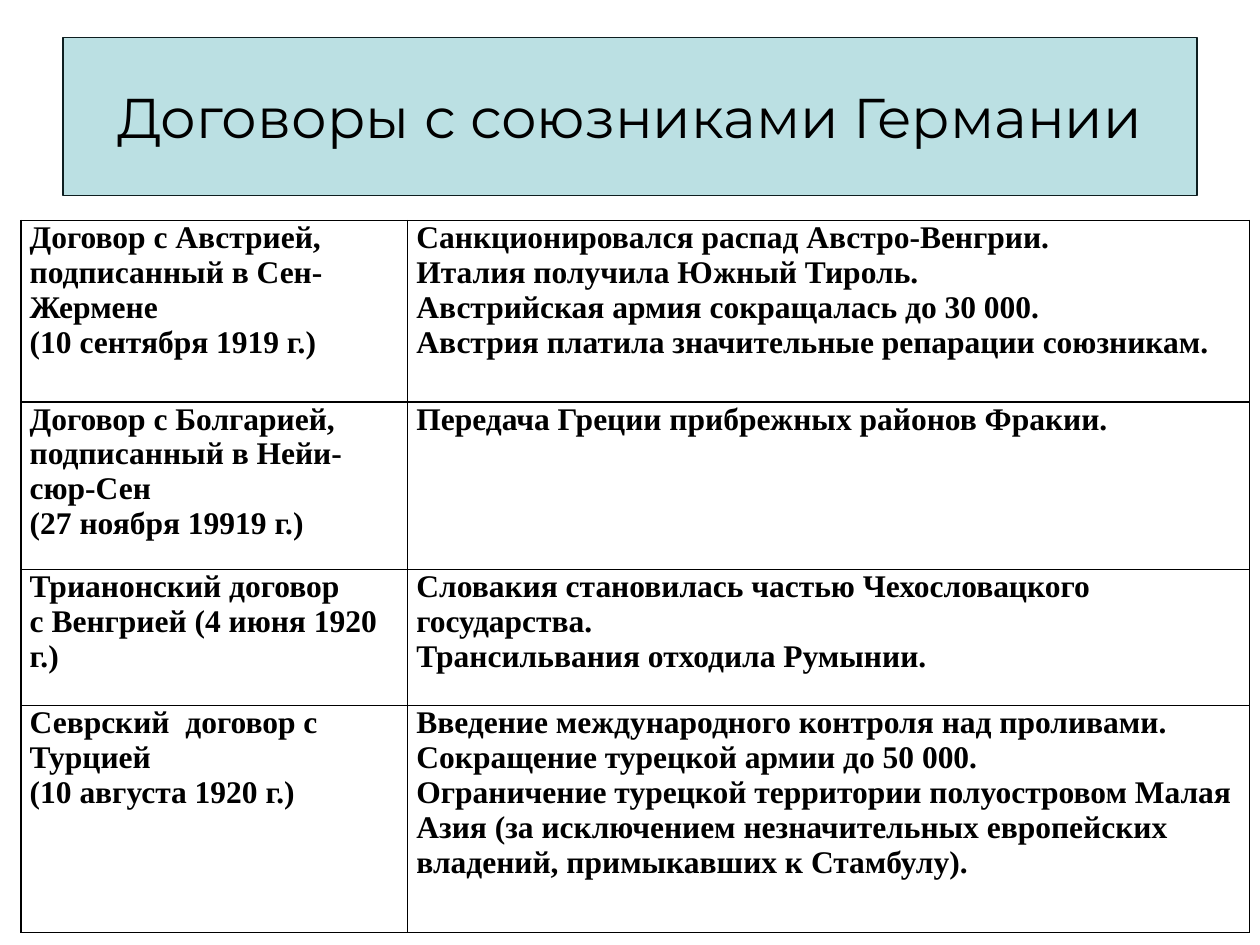
from lxml import etree
from pptx import Presentation
from pptx.dml.color import RGBColor
from pptx.enum.shapes import MSO_SHAPE
from pptx.enum.text import MSO_ANCHOR, PP_ALIGN
from pptx.oxml.ns import qn
from pptx.util import Pt

RECTANGLE = MSO_SHAPE.RECTANGLE
MIDDLE = MSO_ANCHOR.MIDDLE
CENTER = PP_ALIGN.CENTER

BLACK = RGBColor(0x00, 0x00, 0x00)
PALE_TEAL = RGBColor(0xBB, 0xE0, 0xE3)
DARK_TEAL = RGBColor(0x0E, 0x1E, 0x20)

COLUMN_WIDTHS = [221, 481]
ROW_HEIGHTS = [103.7, 95.8, 77.8, 129.6]
TREATIES = [
    ("Договор с Австрией, подписанный в Сен-Жермене\n(10 сентября 1919 г.)",
     "Санкционировался распад Австро-Венгрии.\n"
     "Италия получила Южный Тироль.\n"
     "Австрийская армия сокращалась до 30 000.\n"
     "Австрия платила значительные репарации союзникам."),
    ("Договор с Болгарией, подписанный в Нейи-сюр-Сен\n(27 ноября 19919 г.)",
     "Передача Греции прибрежных районов Фракии."),
    ("Трианонский договор\nс Венгрией (4 июня 1920 г.)",
     "Словакия становилась частью Чехословацкого государства.\n"
     "Трансильвания отходила Румынии."),
    ("Севрский  договор с Турцией\n(10 августа 1920 г.)",
     "Введение международного контроля над проливами.\n"
     "Сокращение турецкой армии до 50 000.\n"
     "Ограничение турецкой территории полуостровом Малая Азия "
     "(за исключением незначительных европейских владений, "
     "примыкавших к Стамбулу)."),
]


class PageBuilder:
    """Holds the style and the current slide."""

    title_font, title_size = "Montserrat", 32
    body_font, body_size = "Times New Roman", 18
    border_width = 1

    def __init__(self, page):
        self.page = page

    def format_text(self, frame, font, size, bold=False):
        for para in frame.paragraphs:
            for span in para.runs:
                span.font.name = font
                span.font.size = Pt(size)
                span.font.bold = bold
                span.font.color.rgb = BLACK

    def title(self, text, left, top, width, height):
        box = self.page.shapes.add_shape(
            RECTANGLE, Pt(left), Pt(top), Pt(width), Pt(height))
        box.shadow.inherit = False
        box.fill.solid()
        box.fill.fore_color.rgb = PALE_TEAL
        box.line.color.rgb = DARK_TEAL
        box.line.width = Pt(0.75)
        frame = box.text_frame
        frame.text = text
        frame.word_wrap = True
        frame.vertical_anchor = MIDDLE
        frame.paragraphs[0].alignment = CENTER
        self.format_text(frame, self.title_font, self.title_size)

    def cell_borders(self, cell):
        properties = cell._tc.get_or_add_tcPr()
        for index, side in enumerate(("lnL", "lnR", "lnT", "lnB")):
            line = etree.Element(qn(f"a:{side}"), w=str(Pt(self.border_width)))
            fill = etree.SubElement(line, qn("a:solidFill"))
            etree.SubElement(fill, qn("a:srgbClr"), val=str(BLACK))
            properties.insert(index, line)

    def table(self, rows, left, top, widths, heights):
        table = self.page.shapes.add_table(
            len(rows), len(widths), Pt(left), Pt(top),
            Pt(sum(widths)), Pt(sum(heights))).table
        table.first_row = table.horz_banding = False
        for column, width in zip(table.columns, widths):
            column.width = Pt(width)
        for row, height, texts in zip(table.rows, heights, rows):
            row.height = Pt(height)
            for cell, text in zip(row.cells, texts):
                cell.margin_left = cell.margin_right = Pt(5)
                cell.margin_top = cell.margin_bottom = Pt(0)
                cell.fill.background()
                cell.text_frame.text = text
                self.format_text(cell.text_frame, self.body_font,
                                 self.body_size, bold=True)
                self.cell_borders(cell)


def main():
    deck = Presentation()
    deck.slide_width, deck.slide_height = Pt(720), Pt(540)
    builder = PageBuilder(deck.slides.add_slide(deck.slide_layouts[6]))

    # Treaties and their terms
    builder.table(TREATIES, 12, 126, COLUMN_WIDTHS, ROW_HEIGHTS)

    # Heading
    builder.title("Договоры с союзниками Германии", 36, 21.6, 648, 90)

    deck.save("out.pptx")


if __name__ == "__main__":
    main()
